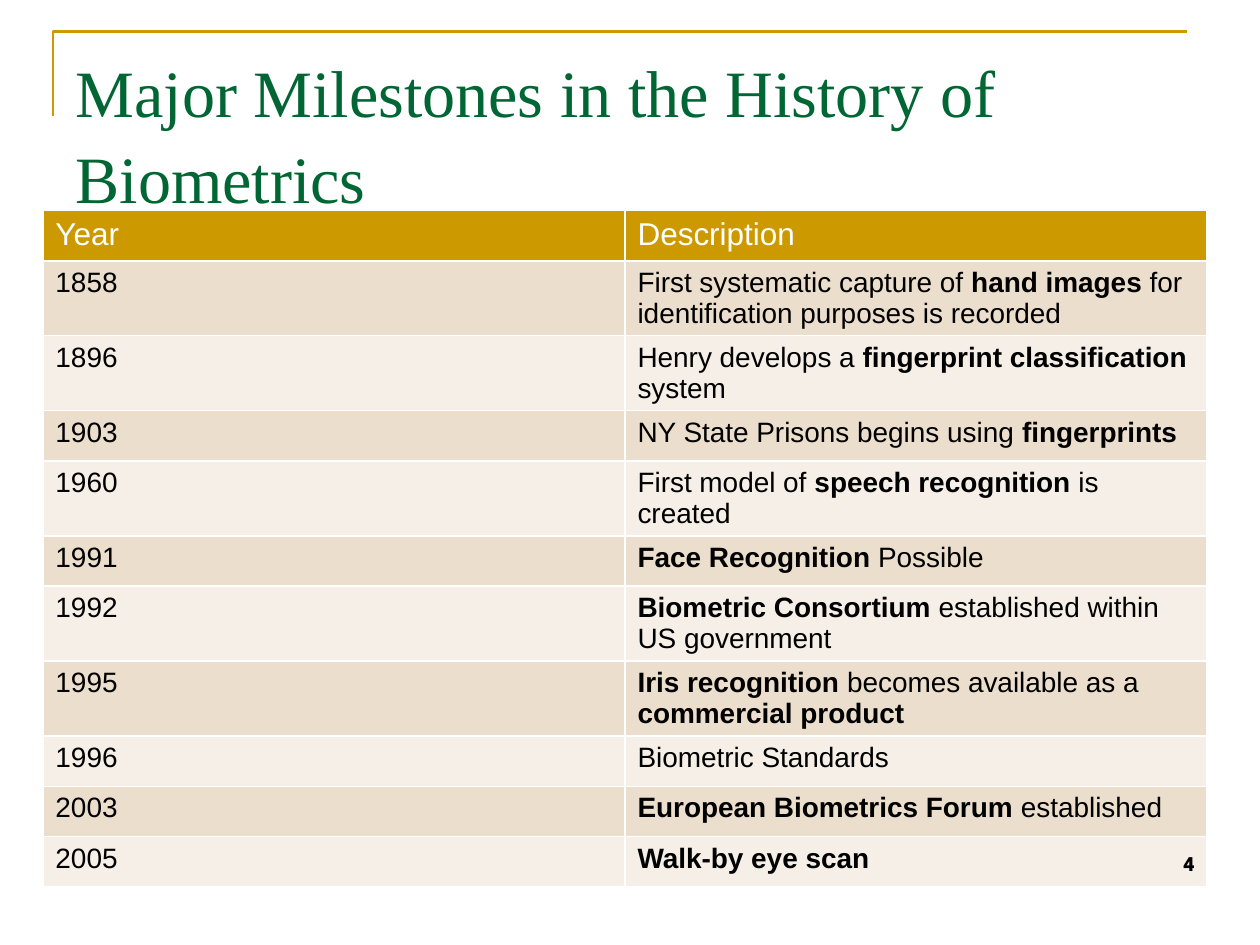
"""Build the slide on milestones in the history of biometrics."""
from pptx import Presentation
from pptx.dml.color import RGBColor
from pptx.enum import text
from pptx.util import Inches, Pt

COLORS = {
    "gold": "CC9900", "green": "006633", "white": "FFFFFF",
    "black": "000000", "dark_band": "ECDECC", "light_band": "F6EFE7",
}
TITLE = "Major Milestones in the History of Biometrics"
HEADER = ("Year", "Description")
MILESTONES = [
    ("1858", [("First systematic capture of ", False), ("hand images ", True),
              ("for identification purposes is recorded", False)]),
    ("1896", [("Henry develops a ", False), ("fingerprint classification", True),
              (" system", False)]),
    ("1903", [("NY State Prisons begins using ", False), ("fingerprints", True)]),
    ("1960", [("First model of ", False), ("speech recognition ", True),
              ("is created", False)]),
    ("1991", [("Face Recognition", True), (" Possible", False)]),
    ("1992", [("Biometric Consortium ", True),
              ("established within US government", False)]),
    ("1995", [("Iris recognition ", True), ("becomes available as a ", False),
              ("commercial product", True)]),
    ("1996", [("Biometric Standards", False)]),
    ("2003", [("European Biometrics Forum ", True), ("established", False)]),
    ("2005", [("Walk-by eye scan", True)]),
]
PAGE_NUMBER = "4"
FRAME = [(0.42, 0.92), (0.42, 0.25), (9.42, 0.25)]
ROW_HEIGHT = 0.4
COLUMN_WIDTH = 4.62


def rgb(name):
    return RGBColor.from_string(COLORS[name])


def add_run(p, content, size=16, font="Arial", color="black", bold=False):
    r = p.add_run()
    r.text = content
    r.font.size = Pt(size)
    r.font.name = font
    r.font.bold = bold
    r.font.color.rgb = rgb(color)


def fill_cell(cell, runs, band, **style):
    cell.fill.solid()
    cell.fill.fore_color.rgb = rgb(band)
    for content, bold in runs:
        add_run(cell.text_frame.paragraphs[0], content, bold=bold, **style)


def add_frame(slide):
    points = [(Inches(x), Inches(y)) for x, y in FRAME]
    builder = slide.shapes.build_freeform(*points[0])
    builder.add_line_segments(points[1:], close=False)
    sp = builder.convert_to_shape()
    sp.shadow.inherit = False
    sp.fill.background()
    sp.line.color.rgb = rgb("gold")
    sp.line.width = Pt(1.5)


def add_title(slide):
    sp = slide.shapes.title
    sp.left, sp.top, sp.width, sp.height = map(Inches, (0.5, 0.3, 9, 1.25))
    tf = sp.text_frame
    tf.word_wrap = True
    tf.auto_size = text.MSO_AUTO_SIZE.NONE
    tf.vertical_anchor = text.MSO_ANCHOR.TOP
    p = tf.paragraphs[0]
    p.alignment = text.PP_ALIGN.LEFT
    p.line_spacing = 1.09
    add_run(p, TITLE, size=37.8, font="Times New Roman", color="green")


def add_milestones(slide):
    count = len(MILESTONES) + 1
    table = slide.shapes.add_table(
        count, 2, Inches(0.34), Inches(1.67),
        Inches(2 * COLUMN_WIDTH), Inches(count * ROW_HEIGHT)).table
    for column in table.columns:
        column.width = Inches(COLUMN_WIDTH)
    for i, label in enumerate(HEADER):
        fill_cell(table.cell(0, i), [(label, False)], "gold", size=18, color="white")
    for i, (year, runs) in enumerate(MILESTONES, 1):
        band = "dark_band" if i % 2 else "light_band"
        fill_cell(table.cell(i, 0), [(year, False)], band)
        fill_cell(table.cell(i, 1), runs, band)


def add_page_number(slide):
    sp = slide.shapes.add_textbox(*map(Inches, (7.25, 6.5, 2.33, 0.5)))
    tf = sp.text_frame
    tf.word_wrap = True
    tf.vertical_anchor = text.MSO_ANCHOR.BOTTOM
    p = tf.paragraphs[0]
    p.alignment = text.PP_ALIGN.RIGHT
    add_run(p, PAGE_NUMBER, size=12, font="League Spartan", bold=True)


def main():
    prs = Presentation()
    prs.slide_width, prs.slide_height = Inches(10), Inches(7.5)
    slide = prs.slides.add_slide(prs.slide_layouts[5])
    add_frame(slide)
    add_title(slide)
    add_milestones(slide)
    add_page_number(slide)
    prs.save("out.pptx")


if __name__ == "__main__":
    main()
